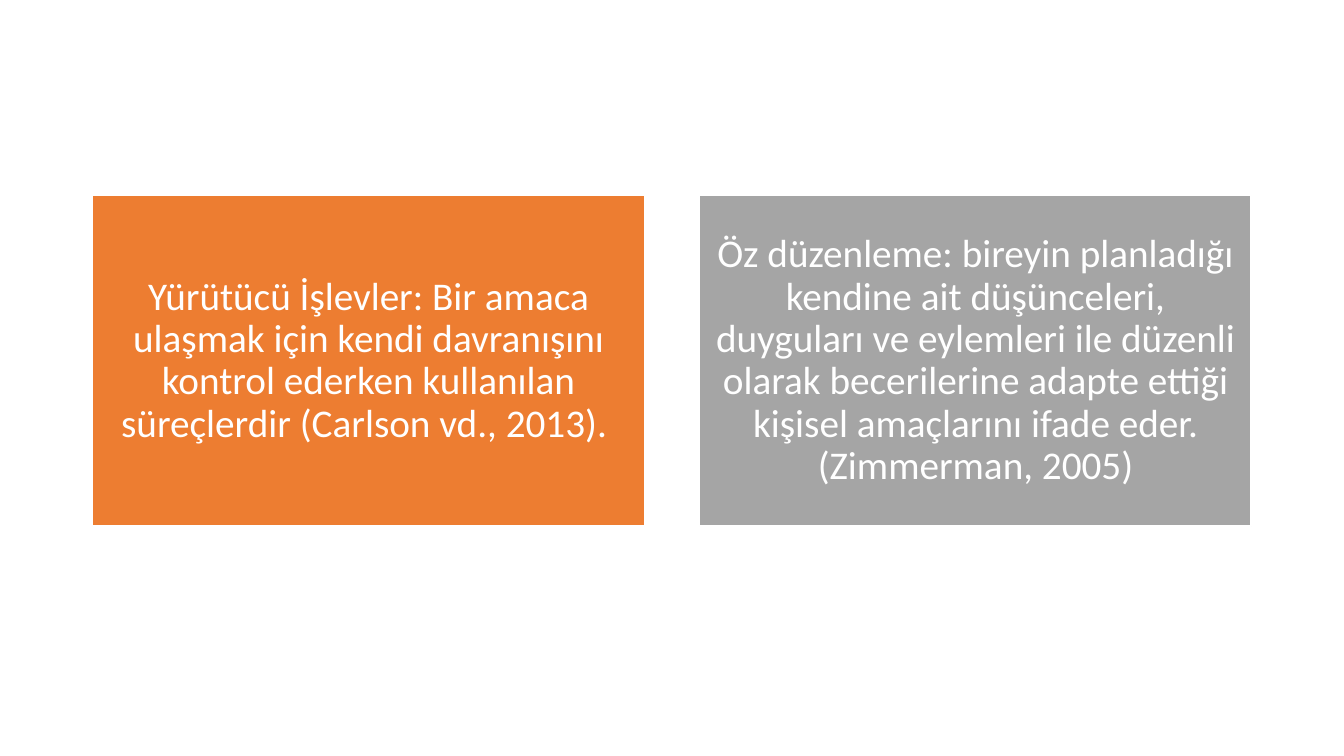
"""Builds a slide with two definition cards side by side."""
from pptx import Presentation
from pptx.dml.color import RGBColor
from pptx.enum.shapes import MSO_SHAPE
from pptx.enum.text import MSO_ANCHOR, PP_ALIGN
from pptx.util import Inches, Pt

ORANGE = RGBColor(0xED, 0x7D, 0x31)
GRAY = RGBColor(0xA5, 0xA5, 0xA5)
WHITE = RGBColor(0xFF, 0xFF, 0xFF)

LEFT, TOP = 0.92, 1.94
CARD_WIDTH, CARD_HEIGHT = 5.47, 3.28
GAP = 0.55
INSET = Inches(0.12)

FRAME_FORMAT = {
    "word_wrap": True,
    "vertical_anchor": MSO_ANCHOR.MIDDLE,
    "margin_left": INSET,
    "margin_top": INSET,
    "margin_right": INSET,
    "margin_bottom": INSET,
}
PARAGRAPH_FORMAT = {"alignment": PP_ALIGN.CENTER, "line_spacing": 0.9}
FONT_FORMAT = {"name": "Calibri", "size": Pt(28)}

CARDS = [
    (ORANGE, "Yürütücü İşlevler: Bir amaca ulaşmak için kendi davranışını "
             "kontrol ederken kullanılan süreçlerdir (Carlson vd., 2013). "),
    (GRAY, "Öz düzenleme: bireyin planladığı kendine ait düşünceleri, "
           "duyguları ve eylemleri ile düzenli olarak becerilerine adapte "
           "ettiği kişisel amaçlarını ifade eder. (Zimmerman, 2005)"),
]


def apply_format(target, values):
    for name, value in values.items():
        setattr(target, name, value)


def add_card(slide, column, color, text):
    left = LEFT + column * (CARD_WIDTH + GAP)
    shape = slide.shapes.add_shape(
        MSO_SHAPE.RECTANGLE, Inches(left), Inches(TOP),
        Inches(CARD_WIDTH), Inches(CARD_HEIGHT))
    shape.shadow.inherit = False
    shape.fill.solid()
    shape.fill.fore_color.rgb = color
    shape.line.color.rgb = WHITE
    shape.line.width = Pt(1)

    frame = shape.text_frame
    frame.text = text
    paragraph = frame.paragraphs[0]
    font = paragraph.runs[0].font
    apply_format(frame, FRAME_FORMAT)
    apply_format(paragraph, PARAGRAPH_FORMAT)
    apply_format(font, FONT_FORMAT)
    font.color.rgb = WHITE


def main():
    presentation = Presentation()
    presentation.slide_width = Inches(13.33)
    presentation.slide_height = Inches(7.5)
    slide = presentation.slides.add_slide(presentation.slide_layouts[6])
    for column, (color, text) in enumerate(CARDS):
        add_card(slide, column, color, text)
    presentation.save("out.pptx")


if __name__ == "__main__":
    main()
